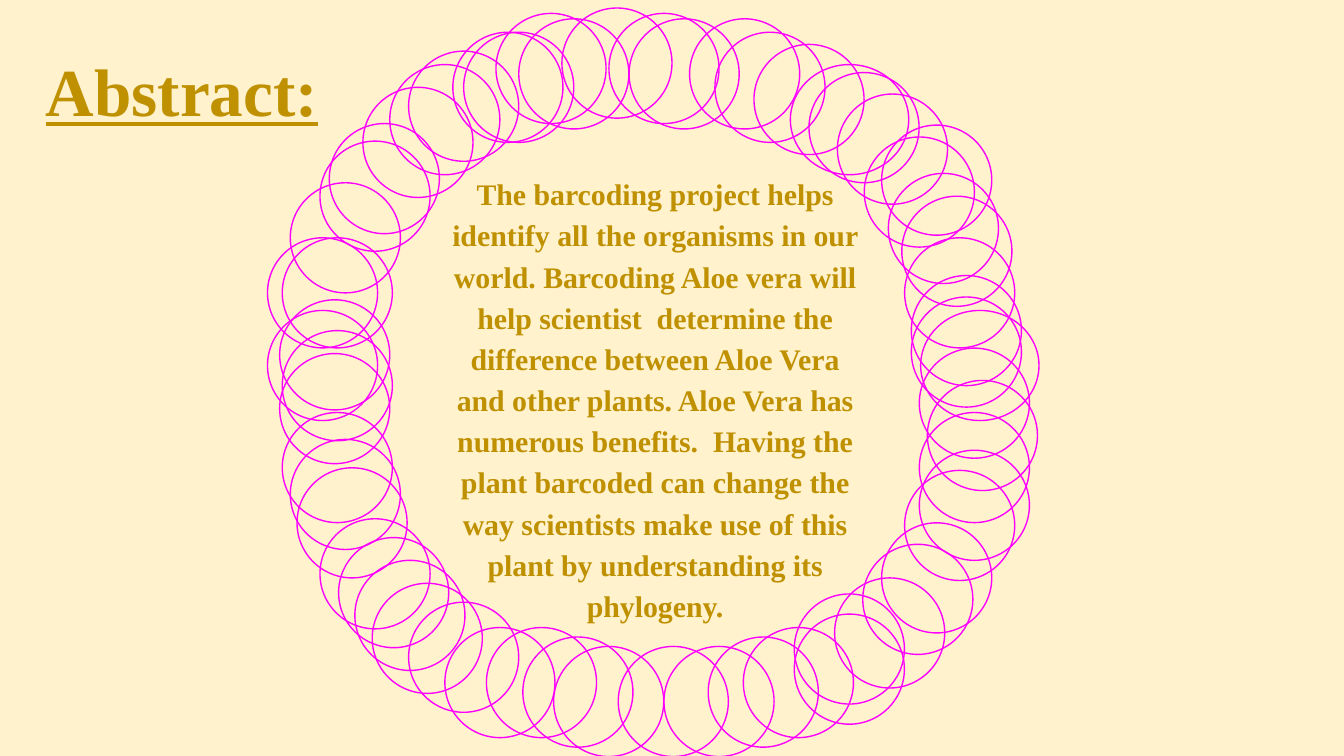
import pptx
import pptx.util
import pptx.dml.color
import pptx.enum.shapes
import pptx.enum.text

Pt = pptx.util.Pt
RGB = pptx.dml.color.RGBColor.from_string
SHAPE = pptx.enum.shapes.MSO_SHAPE
ALIGN = pptx.enum.text.PP_ALIGN

# Content
TITLE = "Abstract:"
BODY = (
    "The barcoding project helps identify all the organisms in our world. "
    "Barcoding Aloe vera will help scientist  determine the difference between "
    "Aloe Vera and other plants. Aloe Vera has numerous benefits.  Having the "
    "plant barcoded can change the way scientists make use of this plant by "
    "understanding its phylogeny."
)

# Wreath: left and top of each ring, clockwise from the top
RINGS = [
    (301, 4.3), (326.2, 7.2), (337, 10.1), (369.4, 10.1), (383, 17.3),
    (403.9, 23.8), (433.4, 38.9), (448.6, 50.4), (463, 73.4),
    (475.9, 92.9), (483.1, 105.1), (484.6, 127.4), (488.2, 147.6),
    (488.2, 159.1), (492.5, 186.5), (496.8, 203.8), (492.5, 221),
    (492.5, 241.2), (484.6, 252), (472.3, 280.1), (462.2, 291.6),
    (447.1, 309.6), (425.5, 318.2), (425.5, 329), (398.2, 336.2),
    (379.4, 341.3), (355.7, 346.3), (331.2, 346.3), (296.6, 346.3),
    (280.1, 341.3), (260.6, 336.2), (238.3, 336.2), (218.9, 322.6),
    (199.4, 312.5), (190.1, 300.2), (181.4, 288), (171.4, 277.9),
    (159.1, 250.6), (155.5, 235.4), (151.2, 221), (149.8, 189.4),
    (151.2, 177.1), (143.3, 166.3), (149.8, 160.6), (143.3, 127.4),
    (151.2, 127.4), (155.5, 97.9), (171.4, 75.6), (176.4, 66.2),
    (194.4, 46.8), (208.8, 34.6), (218.9, 27.4), (242.6, 17.3),
    (248.4, 17.3), (265.7, 7.2), (277.9, 10.1),
]
WIDE_RINGS = [(423.4, 34.6), (493.2, 166.3)]
CONNECTOR_RING = (472.3, 67)

THEME = {
    "font": "Times New Roman",
    "background": "FFF2CC",
    "text": "BF9000",
    "ring": "FF00FF",
    "title_size": 36,
    "body_size": 16,
    "ring_line": 0.75,
    "ring_size": 59,
    "wide_ring": 63.4,
    "inset": 7.2,
}


def write(sp, text, box, size, align=ALIGN.LEFT, spacing=1.0, underline=False):
    """Place a placeholder and fill it with one formatted paragraph."""
    sp.left, sp.top, sp.width, sp.height = map(Pt, box)
    tf = sp.text_frame
    tf.word_wrap = True
    tf.auto_size = pptx.enum.text.MSO_AUTO_SIZE.NONE
    tf.vertical_anchor = pptx.enum.text.MSO_ANCHOR.TOP
    tf.margin_left = tf.margin_right = Pt(THEME["inset"])
    tf.margin_top = tf.margin_bottom = Pt(THEME["inset"])
    p = tf.paragraphs[0]
    p.alignment, p.line_spacing = align, spacing
    p.space_before = p.space_after = Pt(0)
    # No bullet, no hanging indent
    pPr = p._p.get_or_add_pPr()
    pPr.set("marL", "0")
    pPr.set("indent", "0")
    pPr.append(pptx.oxml.parse_xml(
        '<a:buNone xmlns:a="http://schemas.openxmlformats.org/drawingml/2006/main"/>'))
    r = p.add_run()
    r.text = text
    r.font.name, r.font.size = THEME["font"], Pt(size)
    r.font.bold, r.font.underline = True, underline
    r.font.color.rgb = RGB(THEME["text"])


def add_ring(s, left, top, width=THEME["ring_size"], kind=SHAPE.OVAL):
    sp = s.shapes.add_shape(kind, Pt(left), Pt(top), Pt(width), Pt(THEME["ring_size"]))
    sp.shadow.inherit = False
    sp.fill.background()
    sp.line.color.rgb = RGB(THEME["ring"])
    sp.line.width = Pt(THEME["ring_line"])


def main():
    prs = pptx.Presentation()
    prs.slide_width, prs.slide_height = Pt(720), Pt(405)
    s = prs.slides.add_slide(prs.slide_layouts[1])
    s.background.fill.solid()
    s.background.fill.fore_color.rgb = RGB(THEME["background"])

    # Heading and abstract
    write(s.shapes.title, TITLE, (17.3, 19.4, 181.4, 92.9),
          THEME["title_size"], underline=True)
    write(s.placeholders[1], BODY, (233.3, 84.2, 235.4, 192.2),
          THEME["body_size"], align=ALIGN.CENTER, spacing=1.15)

    # Wreath of rings
    for left, top in RINGS:
        add_ring(s, left, top)
    for left, top in WIDE_RINGS:
        add_ring(s, left, top, width=THEME["wide_ring"])
    add_ring(s, *CONNECTOR_RING, kind=SHAPE.FLOWCHART_CONNECTOR)

    prs.save("out.pptx")


if __name__ == "__main__":
    main()
